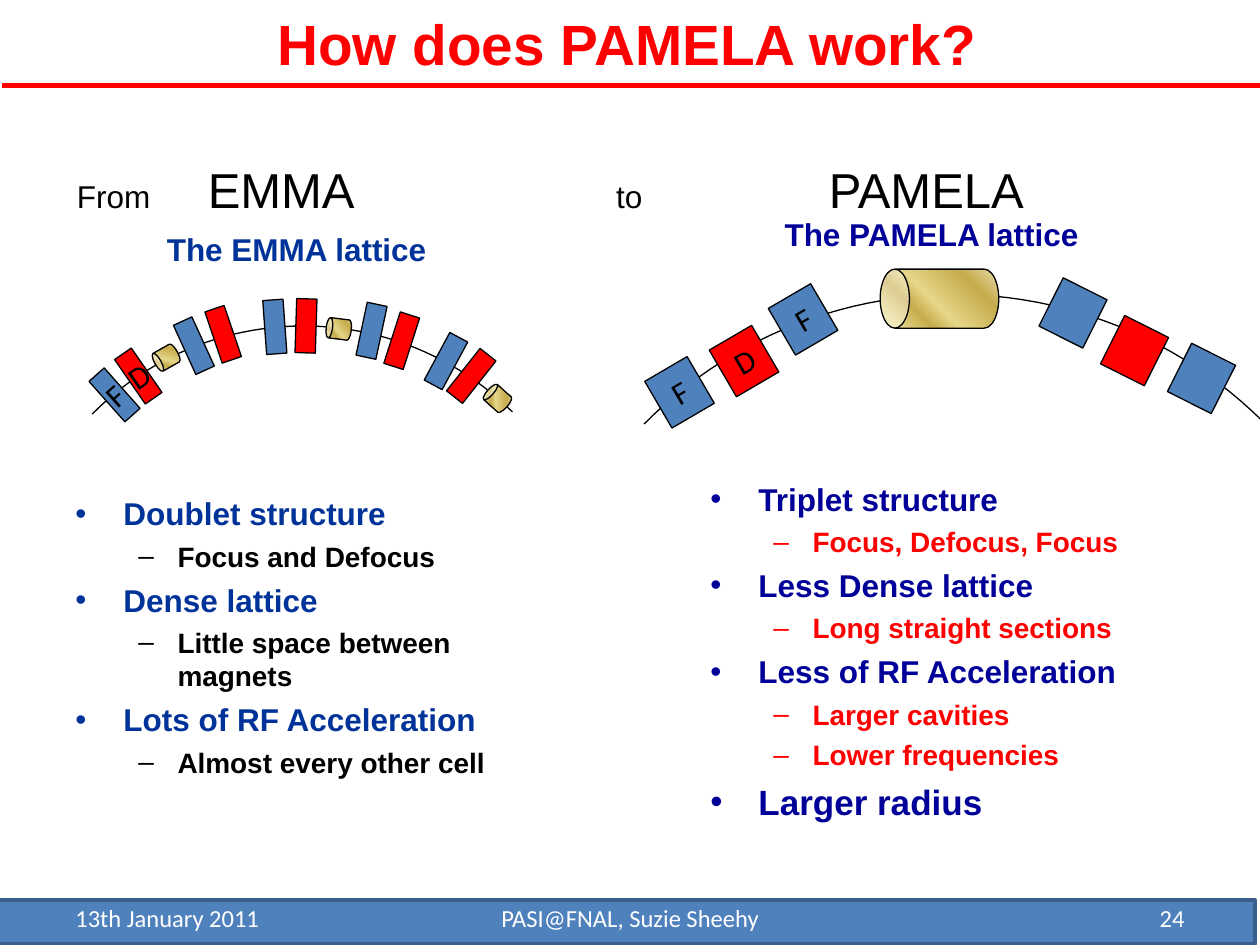
import math
from dataclasses import dataclass
from typing import NamedTuple, Optional

from lxml import etree
from pptx import Presentation
from pptx import util as u
from pptx.dml.color import RGBColor
from pptx.enum import shapes, text
from pptx.oxml import ns


@dataclass(frozen=True)
class Theme:
    heading_font: str = "Arial"
    label_font: str = "Calibri"
    red: str = "FF0000"
    blue: str = "4F81BD"
    bar_edge: str = "3A5F8C"
    emma: str = "003399"
    pamela: str = "000099"
    black: str = "000000"
    white: str = "FFFFFF"
    gold: tuple = ((0, "E6DCAC"), (12, "E6D78A"), (30, "C7AC4C"),
                   (45, "E6D78A"), (77, "C7AC4C"), (100, "E6DCAC"))
    title: float = 32.4
    name: float = 28
    large: float = 20
    body: float = 18
    detail: float = 16
    footer: float = 14


THEME = Theme()
LEFT, CENTER, RIGHT = text.PP_ALIGN.LEFT, text.PP_ALIGN.CENTER, text.PP_ALIGN.RIGHT
TOP, MIDDLE = text.MSO_ANCHOR.TOP, text.MSO_ANCHOR.MIDDLE


class Box(NamedTuple):
    left: float
    top: float
    width: float
    height: float

    def lengths(self) -> list:
        return [u.Cm(value) for value in self]


class Element(NamedTuple):
    """A lattice element: F and D are magnets, C is a cavity."""
    kind: str
    x: float
    y: float
    rotation: float
    label: str = ""


class Item(NamedTuple):
    words: str
    level: int = 0
    size: Optional[float] = None


class Lattice(NamedTuple):
    orbit: Box
    magnet: tuple
    cavity: tuple
    cavity_rim: float
    elements: list


class Panel(NamedTuple):
    heading: str
    heading_box: Box
    bullets_box: Box
    colour: str
    detail_colour: str
    items: list
    lattice: Lattice


# Content
EMMA = Panel(
    "The EMMA lattice", Box(1.27, 4.52, 9.42, 1), Box(1.27, 9.84, 9.42, 6.2),
    THEME.emma, THEME.black,
    [Item("Doublet structure"), Item("Focus and Defocus", 1),
     Item("Dense lattice"), Item("Little space between magnets", 1),
     Item("Lots of RF Acceleration"), Item("Almost every other cell", 1)],
    Lattice(Box(3.1, 5.33, 5.99, 5.99), (0.41, 1.09), (0.41, 0.51), 0.314, [
        Element("F", 2.31, 7.96, 318.4, "F"), Element("D", 2.79, 7.58, 325.3, "D"),
        Element("C", 3.35, 7.21, 240.5),
        Element("F", 3.91, 6.97, 335.5), Element("D", 4.5, 6.74, 341.3),
        Element("F", 5.54, 6.59, 355.9), Element("D", 6.17, 6.57, 1.8),
        Element("C", 6.83, 6.63, 277),
        Element("F", 7.49, 6.67, 12), Element("D", 8.1, 6.87, 17.8),
        Element("F", 8.99, 7.28, 28.3), Element("D", 9.5, 7.58, 38.3),
        Element("C", 10.03, 8.03, 311.9)]))

PAMELA = Panel(
    "The PAMELA lattice", Box(14.07, 4.22, 9.42, 1), Box(14.07, 9.55, 9.42, 7.2),
    THEME.pamela, THEME.red,
    [Item("Triplet structure"), Item("Focus, Defocus, Focus", 1),
     Item("Less Dense lattice"), Item("Long straight sections", 1),
     Item("Less of RF Acceleration"), Item("Larger cavities", 1),
     Item("Lower frequencies", 1), Item("Larger radius", 0, THEME.large)],
    Lattice(Box(14.81, 4.11, 8.81, 8.81), (0.99, 1.09), (1.19, 2.39), 0.495, [
        Element("C", 18.94, 6.02, 270),
        Element("F", 16.19, 6.44, 329.7, "F"), Element("D", 15, 7.28, 329.7, "D"),
        Element("F", 13.7, 7.91, 329.7, "F"), Element("F", 24.22, 7.63, 26.7),
        Element("D", 22.87, 7.07, 26.7), Element("F", 21.63, 6.31, 26.7)]))


# Text
def add_run(paragraph, words: str, size: float, colour: str,
            font: str = THEME.heading_font, bold: bool = False) -> None:
    run = paragraph.add_run()
    run.text = words
    run.font.size, run.font.name, run.font.bold = u.Pt(size), font, bold
    run.font.color.rgb = RGBColor.from_string(colour)


def add_frame(slide, box: Box, anchor=TOP, align=LEFT):
    frame = slide.shapes.add_textbox(*box.lengths()).text_frame
    frame.word_wrap = True
    frame.vertical_anchor = anchor
    frame.paragraphs[0].alignment = align
    return frame


def add_bullets(slide, panel: Panel) -> None:
    frame = add_frame(slide, panel.bullets_box)
    styles = ((0.97, -0.97, "•", THEME.body, panel.colour),
              (2.06, -0.79, "–", THEME.detail, panel.detail_colour))
    for index, item in enumerate(panel.items):
        paragraph = frame.add_paragraph() if index else frame.paragraphs[0]
        margin, indent, bullet, size, colour = styles[item.level]
        size = item.size or size
        paragraph.level = item.level
        paragraph.space_before = u.Pt(size / 4 if index else 0)
        properties = paragraph._p.get_or_add_pPr()
        properties.set("marL", str(u.Cm(margin)))
        properties.set("indent", str(u.Cm(indent)))
        etree.SubElement(properties, ns.qn("a:buFont")).set("typeface", THEME.heading_font)
        etree.SubElement(properties, ns.qn("a:buChar")).set("char", bullet)
        add_run(paragraph, item.words, size, colour, bold=True)


def add_comparison(slide) -> None:
    paragraph = add_frame(slide, Box(1.3, 3.1, 22.71, 1.45)).paragraphs[0]
    tabs = etree.SubElement(paragraph._p.get_or_add_pPr(), ns.qn("a:tabLst"))
    for position in (2.64, 10.87, 15.16):
        etree.SubElement(tabs, ns.qn("a:tab"), pos=str(u.Cm(position)), algn="l")
    for words, size in (("From\t", THEME.body), ("EMMA", THEME.name),
                        ("\tto\t", THEME.body), ("PAMELA", THEME.name)):
        add_run(paragraph, words, size, THEME.black)


# Shapes
def style_shape(shape, fill: Optional[str], line: str, width: float) -> None:
    shape.shadow.inherit = False
    if fill:
        shape.fill.solid()
        shape.fill.fore_color.rgb = RGBColor.from_string(fill)
    else:
        shape.fill.background()
    shape.line.color.rgb = RGBColor.from_string(line)
    shape.line.width = u.Pt(width)


def fill_gold(shape) -> None:
    shape.fill.gradient()
    shape.fill.gradient_angle = 315
    stops = shape._element.spPr.find(".//" + ns.qn("a:gsLst"))
    for stop in list(stops):
        stops.remove(stop)
    for percent, colour in THEME.gold:
        stop = etree.SubElement(stops, ns.qn("a:gs"), pos=str(percent * 1000))
        etree.SubElement(stop, ns.qn("a:srgbClr"), val=colour)


def add_orbit(group, box: Box, steps: int = 48) -> None:
    """A quarter circle about the lower left corner, turned to face up."""
    angles = [math.pi / 2 * (1 - step / steps) for step in range(steps + 1)]
    points = [(u.Cm(box.left + box.width * math.cos(angle)),
               u.Cm(box.top + box.height * (1 - math.sin(angle)))) for angle in angles]
    builder = group.shapes.build_freeform(*points[0])
    builder.add_line_segments(points[1:], close=False)
    orbit = builder.convert_to_shape()
    style_shape(orbit, None, THEME.black, 0.75)
    orbit.rotation = 314.7


def add_element(group, lattice: Lattice, element: Element) -> None:
    is_cavity = element.kind == "C"
    width, height = lattice.cavity if is_cavity else lattice.magnet
    preset = shapes.MSO_SHAPE.CAN if is_cavity else shapes.MSO_SHAPE.RECTANGLE
    box = Box(element.x - width / 2, element.y - height / 2, width, height)
    shape = group.shapes.add_shape(preset, *box.lengths())
    style_shape(shape, THEME.red if element.kind == "D" else THEME.blue, THEME.black, 0.75)
    shape.rotation = element.rotation
    if is_cavity:
        shape.adjustments[0] = lattice.cavity_rim
        fill_gold(shape)
    if element.label:
        frame = shape.text_frame
        frame.word_wrap, frame.vertical_anchor = False, MIDDLE
        frame.paragraphs[0].alignment = CENTER
        add_run(frame.paragraphs[0], element.label, THEME.body, THEME.black, THEME.label_font)


def add_panel(slide, panel: Panel) -> None:
    heading = add_frame(slide, panel.heading_box, align=CENTER).paragraphs[0]
    add_run(heading, panel.heading, THEME.body, panel.colour, bold=True)
    group = slide.shapes.add_group_shape()
    add_orbit(group, panel.lattice.orbit)
    for element in panel.lattice.elements:
        add_element(group, panel.lattice, element)
    add_bullets(slide, panel)


def main() -> None:
    presentation = Presentation()
    presentation.slide_width, presentation.slide_height = u.Cm(25.4), u.Cm(19.05)
    slide = presentation.slides.add_slide(presentation.slide_layouts[6])

    # Footer bar, title and its rule
    bar = slide.shapes.add_shape(shapes.MSO_SHAPE.RECTANGLE,
                                 *Box(-0.1, 18.14, 25.4, 0.89).lengths())
    style_shape(bar, THEME.blue, THEME.bar_edge, 2)
    rule = slide.shapes.add_connector(shapes.MSO_CONNECTOR.STRAIGHT, u.Cm(0.05),
                                      u.Cm(1.73), u.Cm(25.4), u.Cm(1.73))
    rule.line.color.rgb = RGBColor.from_string(THEME.red)
    rule.line.width = u.Pt(3)
    etree.SubElement(rule._element.spPr, ns.qn("a:effectLst"))
    title = add_frame(slide, Box(0.89, 0, 23.5, 1.73), MIDDLE, CENTER)
    add_run(title.paragraphs[0], "How does PAMELA work?", THEME.title, THEME.red, bold=True)

    # The two machines
    add_comparison(slide)
    for panel in (EMMA, PAMELA):
        add_panel(slide, panel)

    # Footer text
    for words, left, width, align in (("13th January 2011", 1.27, 5.92, LEFT),
                                      ("PASI@FNAL, Suzie Sheehy", 8.68, 8.05, CENTER),
                                      ("24", 18.21, 5.92, RIGHT)):
        frame = add_frame(slide, Box(left, 18.14, width, 0.71), MIDDLE, align)
        add_run(frame.paragraphs[0], words, THEME.footer, THEME.white, THEME.label_font)

    presentation.save("out.pptx")


if __name__ == "__main__":
    main()
